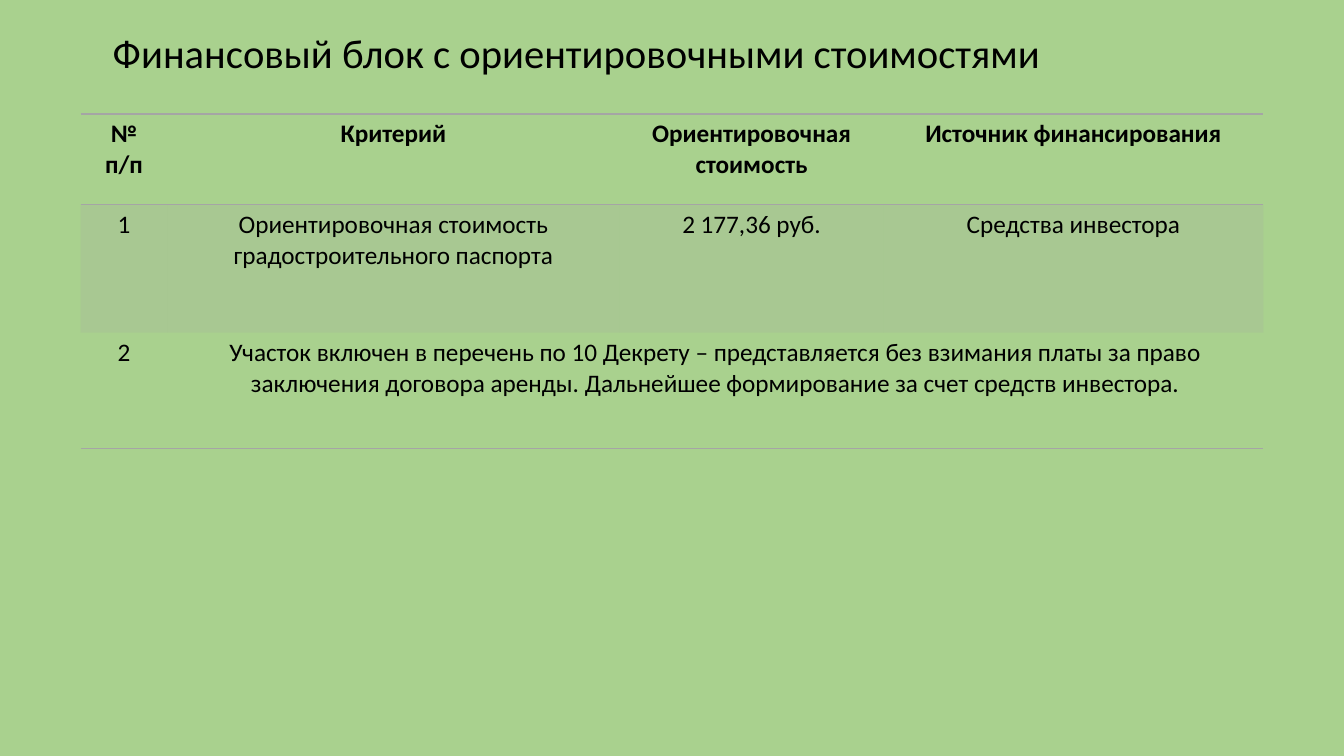
import lxml.etree
import pptx
import pptx.dml.color
import pptx.enum.text
import pptx.oxml.ns
import pptx.util

BACKGROUND, TEXT, RULE = "A9D18E", "000000", "A5A5A5"
PLAIN_TABLE_STYLE = "{2D5ABB26-0587-4C30-8999-92F81FD0307C}"

HEADINGS = ["№ п/п", "Критерий", "Ориентировочная стоимость", "Источник финансирования"]
PASSPORT_COST = ["1", "Ориентировочная стоимость градостроительного паспорта",
                 "2 177,36 руб.", "Средства инвестора"]
LAND_PLOT = ["2", "Участок включен в перечень по 10 Декрету – представляется без "
             "взимания платы за право заключения договора аренды. Дальнейшее "
             "формирование за счет средств инвестора."]


def paint(color_holder, color):
    color_holder.rgb = pptx.dml.color.RGBColor.from_string(color)


def write(frame, text, size=18, bold=False, align="LEFT", spacing=1.0, color=TEXT):
    paragraph = frame.paragraphs[0]
    paragraph.text = text
    paragraph.alignment = getattr(pptx.enum.text.PP_ALIGN, align)
    paragraph.line_spacing = spacing
    font = paragraph.runs[0].font
    font.name, font.size, font.bold = "Calibri", pptx.util.Pt(size), bold
    paint(font.color, color)


def child(parent, tag, **attributes):
    return lxml.etree.SubElement(parent, pptx.oxml.ns.qn(tag), attributes)


def style_cell(cell, edges, tint=None):
    """Rule the given edges ("T", "B"), then fill with tint, a percentage of opacity."""
    properties = cell._tc.get_or_add_tcPr()
    for edge in edges:
        line = child(properties, f"a:ln{edge}", w=str(pptx.util.Pt(1)))
        child(child(line, "a:solidFill"), "a:srgbClr", val=RULE)
    if tint is None:
        cell.fill.background()
    else:
        cell.fill.solid()
        paint(cell.fill.fore_color, RULE)
        color = properties.find(".//" + pptx.oxml.ns.qn("a:solidFill") + "/")
        if edges:
            color = properties.findall(pptx.oxml.ns.qn("a:solidFill"))[-1][0]
        child(color, "a:alpha", val=str(tint * 1000))


class Slide:
    """Places elements by percentages of the slide's width and height."""

    def __init__(self, deck):
        self.width, self.height = deck.slide_width, deck.slide_height
        self.slide = deck.slides.add_slide(deck.slide_layouts[6])
        self.slide.background.fill.solid()
        paint(self.slide.background.fill.fore_color, BACKGROUND)

    def across(self, percent):
        return round(self.width * percent / 100)

    def down(self, percent):
        return round(self.height * percent / 100)

    def box(self, left, top, width, height):
        return self.across(left), self.down(top), self.across(width), self.down(height)

    def title(self, text, *place):
        frame = self.slide.shapes.add_textbox(*self.box(*place)).text_frame
        frame.word_wrap = True
        frame.vertical_anchor = pptx.enum.text.MSO_ANCHOR.MIDDLE
        write(frame, text, size=29, spacing=0.9)

    def table(self, rows, left, top, widths, heights):
        place = self.box(left, top, sum(widths), sum(heights))
        table = self.slide.shapes.add_table(len(rows), len(widths), *place).table
        table.horz_banding = False
        style = table._tbl.tblPr.find(pptx.oxml.ns.qn("a:tableStyleId"))
        style.text = PLAIN_TABLE_STYLE
        for column, width in zip(table.columns, widths):
            column.width = self.across(width)
        for row, height in zip(table.rows, heights):
            row.height = self.down(height)
        for r, (texts, edges, tint) in enumerate(rows):
            for c in range(len(widths)):
                style_cell(table.cell(r, c), edges, tint)
            for c, text in enumerate(texts):
                write(table.cell(r, c).text_frame, text, bold=r == 0, align="CENTER")
            if len(texts) < len(widths):
                table.cell(r, len(texts) - 1).merge(table.cell(r, len(widths) - 1))


def main():
    deck = pptx.Presentation()
    deck.slide_width, deck.slide_height = pptx.util.Inches(13.33), pptx.util.Inches(7.5)
    finance = Slide(deck)
    finance.title("Финансовый блок с ориентировочными стоимостями", 7.65, 1.73, 86.25, 11.2)
    finance.table(
        [(HEADINGS, "TB", None), (PASSPORT_COST, "", 20), (LAND_PLOT, "B", None)],
        left=6, top=15.07,
        widths=[6.45, 33.65, 19.65, 28.25], heights=[12, 16.93, 15.33])
    deck.save("out.pptx")


if __name__ == "__main__":
    main()
